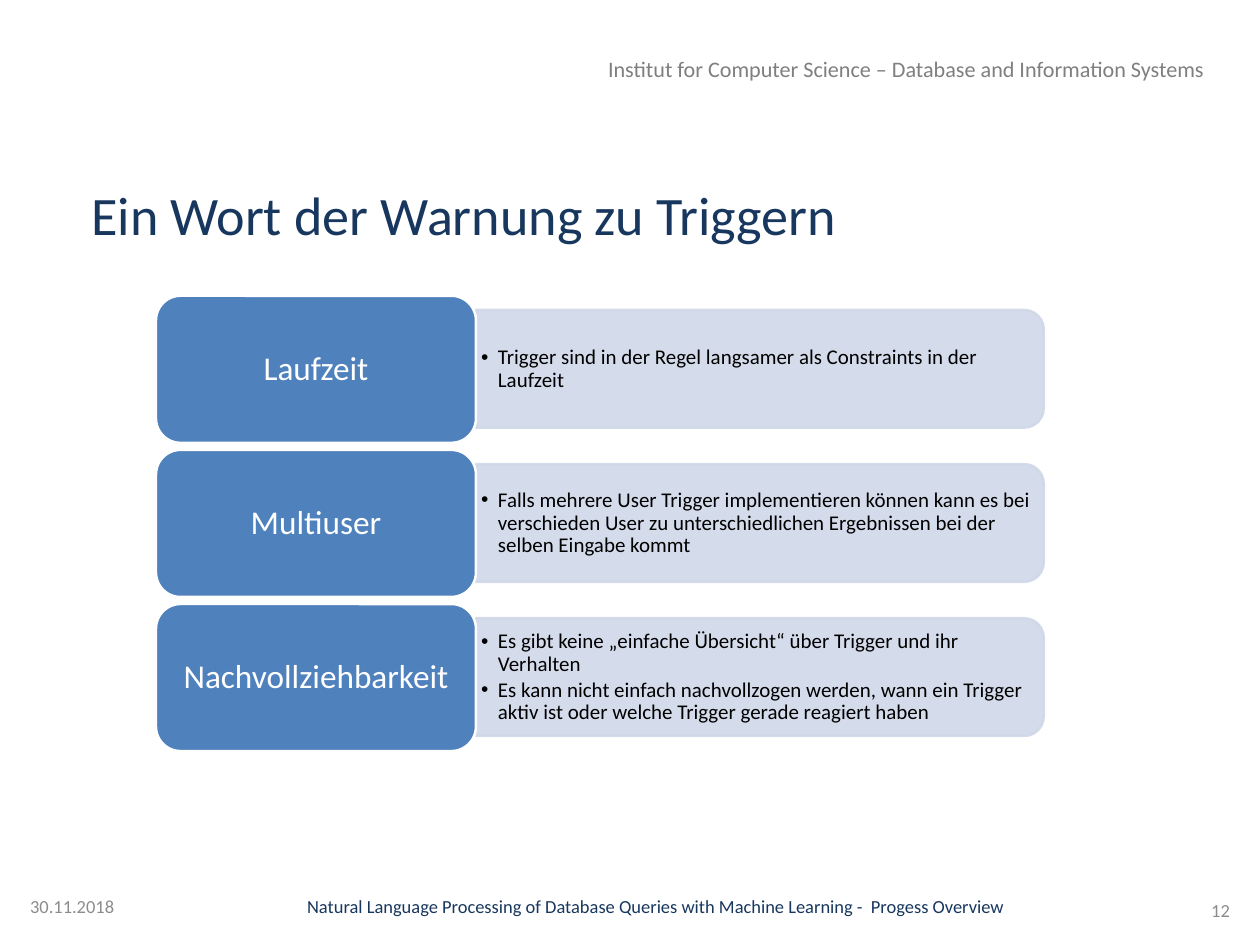
"""Build the slide that warns about database triggers."""
from dataclasses import dataclass
from typing import NamedTuple

from lxml.etree import SubElement
from pptx import Presentation
from pptx.dml.color import RGBColor
from pptx.enum.shapes import MSO_SHAPE
from pptx.enum.text import MSO_ANCHOR, PP_ALIGN
from pptx.oxml.ns import qn
from pptx.util import Inches, Pt

COLORS = {
    "navy": "17375E", "header": "7F7F7F", "footer": "8C8C8C", "label": "4F81BD",
    "panel": "D0D8E8", "white": "FFFFFF", "black": "000000",
}
FONT = "Calibri"
SLIDE_WIDTH, SLIDE_HEIGHT = Inches(14.22), Inches(10.67)
ROW_PITCH = 16.31


class Box(NamedTuple):
    """Left, top, width and height in percent of the slide."""
    left: float
    top: float
    width: float
    height: float

    def lengths(self) -> list[int]:
        sides = (SLIDE_WIDTH, SLIDE_HEIGHT, SLIDE_WIDTH, SLIDE_HEIGHT)
        return [round(share * side / 100) for share, side in zip(self, sides)]

    def in_row(self, row: int) -> "Box":
        return self._replace(top=self.top + row * ROW_PITCH)


@dataclass
class Caption:
    text: str
    box: Box
    size: int
    color: str
    align: PP_ALIGN = PP_ALIGN.LEFT
    inset: float = 0


@dataclass
class Warning:
    label: str
    points: list[str]


LABEL_BOX = Box(12.38, 31.3, 25.39, 15.56)
PANEL_BOX = Box(37.76, 32.8, 45.08, 12.46)
POINTS_BOX = Box(37.69, 33.46, 44.66, 11.25)

CAPTIONS = [
    Caption("Institut for Computer Science – Database and Information Systems",
            Box(45.57, 5.44, 50.7, 5.72), 18, "header", PP_ALIGN.RIGHT, 0.1),
    Caption("Ein Wort der Warnung zu Triggern", Box(7.24, 19.21, 83.4, 6.94), 44, "navy"),
    Caption("Natural Language Processing of Database Queries with Machine Learning -  Progess Overview",
            Box(18.92, 94.75, 66.24, 2.81), 15, "navy", PP_ALIGN.CENTER),
    Caption("30.11.2018", Box(2.39, 94.75, 11.25, 2.91), 15, "footer"),
    Caption("12", Box(91, 95.13, 6.61, 2.53), 15, "footer", PP_ALIGN.RIGHT),
]
WARNINGS = [
    Warning("Laufzeit", ["Trigger sind in der Regel langsamer als Constraints in der Laufzeit"]),
    Warning("Multiuser", [
        "Falls mehrere User Trigger implementieren können kann es bei verschieden User "
        "zu unterschiedlichen Ergebnissen bei der selben Eingabe kommt"]),
    Warning("Nachvollziehbarkeit", [
        "Es gibt keine „einfache Übersicht“ über Trigger und ihr Verhalten",
        "Es kann nicht einfach nachvollzogen werden, wann ein Trigger aktiv ist "
        "oder welche Trigger gerade reagiert haben"]),
]


def rgb(name: str) -> RGBColor:
    return RGBColor.from_string(COLORS[name])


def set_frame(frame, horizontal: float, vertical: float, anchor: MSO_ANCHOR) -> None:
    frame.word_wrap = True
    frame.vertical_anchor = anchor
    frame.margin_left = frame.margin_right = Inches(horizontal)
    frame.margin_top = frame.margin_bottom = Inches(vertical)


def add_run(paragraph, text: str, size: int, color: str) -> None:
    run = paragraph.add_run()
    run.text = text
    run.font.name = FONT
    run.font.size = Pt(size)
    run.font.color.rgb = rgb(color)


def add_caption(slide, caption: Caption) -> None:
    frame = slide.shapes.add_textbox(*caption.box.lengths()).text_frame
    set_frame(frame, caption.inset, caption.inset / 2, MSO_ANCHOR.TOP)
    paragraph = frame.paragraphs[0]
    paragraph.alignment = caption.align
    add_run(paragraph, caption.text, caption.size, caption.color)


def add_block(slide, kind: MSO_SHAPE, lengths: list[int], fill: str, line: str):
    shape = slide.shapes.add_shape(kind, *lengths)
    shape.shadow.inherit = False
    shape.fill.solid()
    shape.fill.fore_color.rgb = rgb(fill)
    shape.line.color.rgb = rgb(line)
    shape.line.width = Pt(2)
    return shape


def add_panel(slide, box: Box) -> None:
    left, top, width, height = box.lengths()
    shift = (width - height) // 2
    panel = add_block(slide, MSO_SHAPE.ROUND_2_SAME_RECTANGLE,
                      [left + shift, top - shift, height, width], "panel", "panel")
    panel.rotation = 90
    for color in panel.element.spPr.iter(qn("a:srgbClr")):
        SubElement(color, qn("a:alpha"), val="90000")


def add_points(slide, box: Box, points: list[str]) -> None:
    frame = slide.shapes.add_textbox(*box.lengths()).text_frame
    set_frame(frame, 0.07, 0.04, MSO_ANCHOR.MIDDLE)
    for index, point in enumerate(points):
        paragraph = frame.add_paragraph() if index else frame.paragraphs[0]
        paragraph.line_spacing = 0.9
        paragraph.space_after = Pt(2.5)
        properties = paragraph._p.get_or_add_pPr()
        properties.set("marL", str(Inches(0.19)))
        properties.set("indent", str(-Inches(0.19)))
        SubElement(properties, qn("a:buFont"), typeface="Arial")
        SubElement(properties, qn("a:buChar"), char="•")
        add_run(paragraph, point, 17, "black")


def add_label(slide, box: Box, text: str) -> None:
    label = add_block(slide, MSO_SHAPE.ROUNDED_RECTANGLE, box.lengths(), "label", "white")
    set_frame(label.text_frame, 0.1, 0.06, MSO_ANCHOR.MIDDLE)
    paragraph = label.text_frame.paragraphs[0]
    paragraph.alignment = PP_ALIGN.CENTER
    paragraph.line_spacing = 0.9
    add_run(paragraph, text, 27, "white")


def main() -> None:
    presentation = Presentation()
    presentation.slide_width, presentation.slide_height = SLIDE_WIDTH, SLIDE_HEIGHT
    slide = presentation.slides.add_slide(presentation.slide_layouts[6])
    for caption in CAPTIONS:
        add_caption(slide, caption)
    for row, warning in enumerate(WARNINGS):
        add_panel(slide, PANEL_BOX.in_row(row))
        add_points(slide, POINTS_BOX.in_row(row), warning.points)
        add_label(slide, LABEL_BOX.in_row(row), warning.label)
    presentation.save("out.pptx")


if __name__ == "__main__":
    main()
